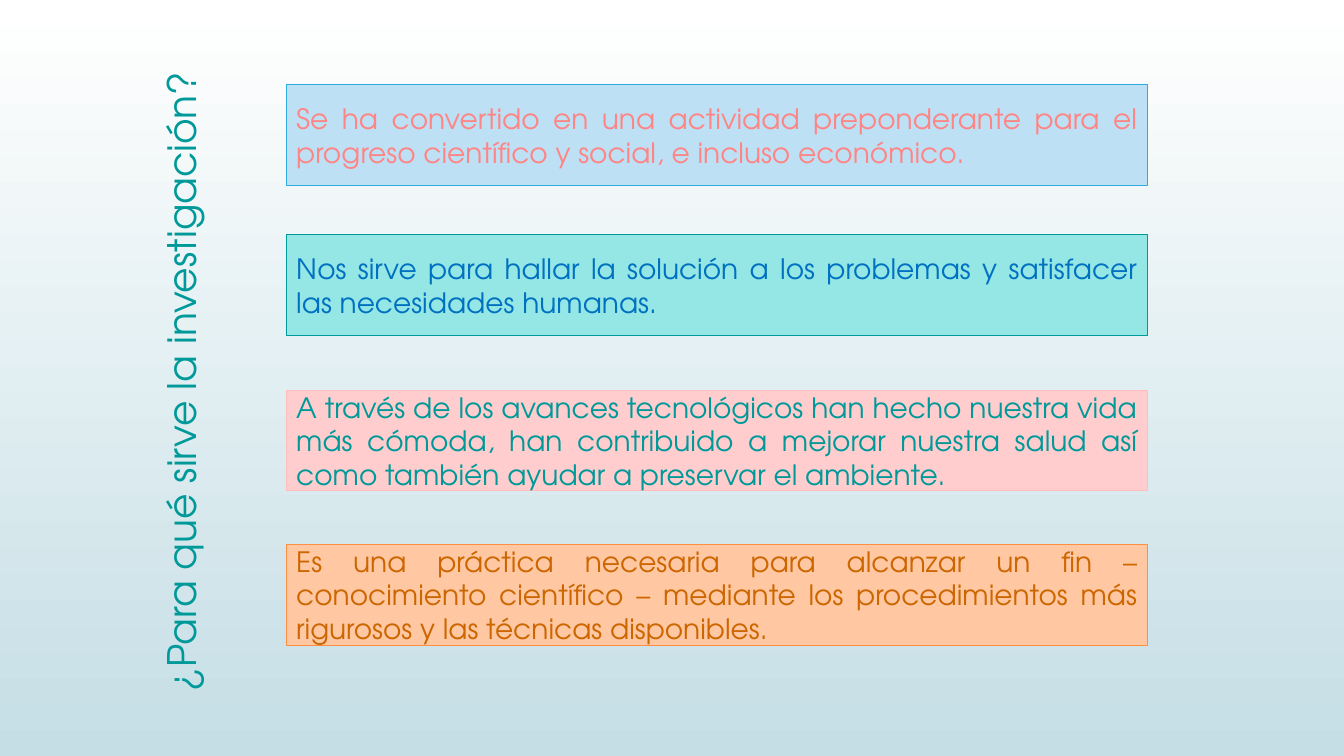
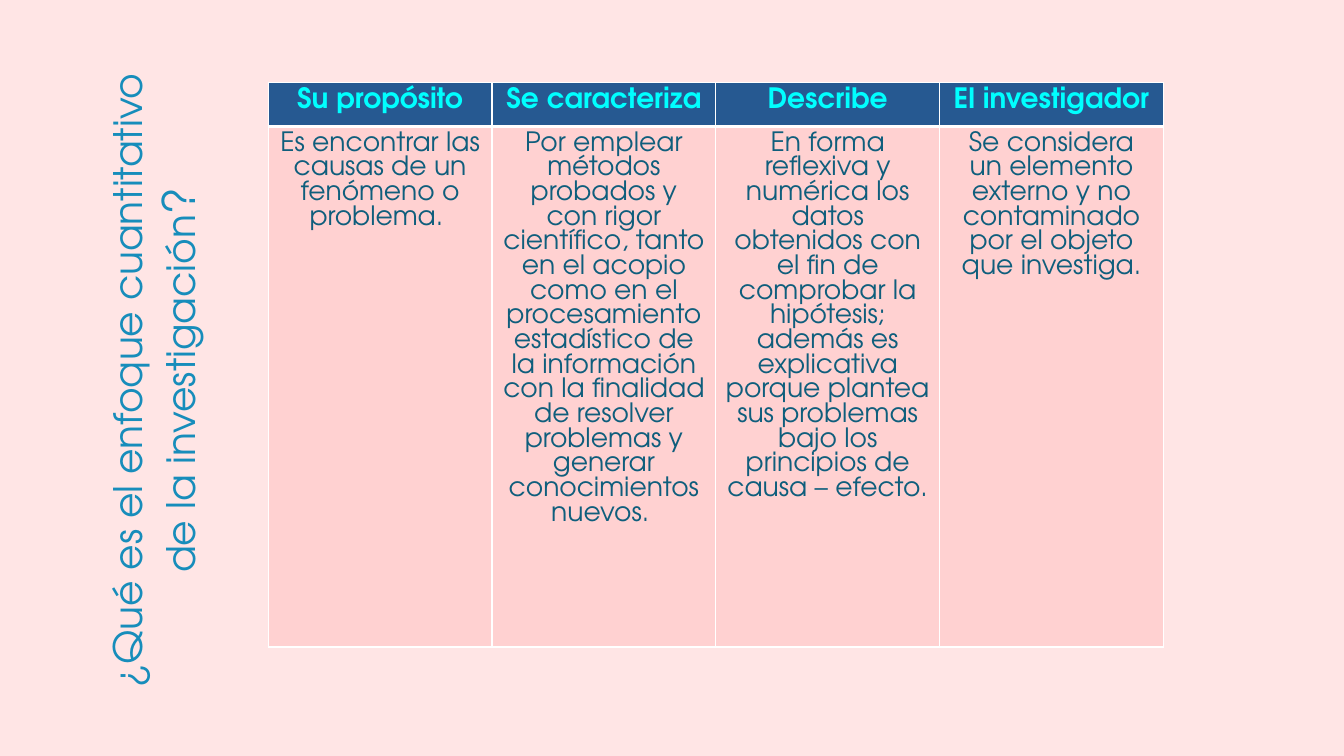
from dataclasses import dataclass

from lxml import etree
from pptx import Presentation
from pptx.dml.color import RGBColor
from pptx.enum.shapes import MSO_SHAPE as Preset
from pptx.enum.text import MSO_ANCHOR as Anchor, PP_ALIGN as Align
from pptx.oxml.ns import qn
from pptx.slide import Slide
from pptx.table import _Cell as Cell
from pptx.text.text import TextFrame
from pptx.util import Inches, Pt

FONT = "TeX Gyre Adventor"
WHITE = "FFFFFF"
TEAL = "009999"
BLUE = "178DBB"
HEADER_FILL = "265991"
HEADER_TEXT = "00FFFF"
BODY_FILL = "FFD1D1"
BODY_TEXT = "0F5E7C"
THIN, THICK = 1, 3


@dataclass(frozen=True)
class TextStyle:
    size: float
    color: str
    bold: bool = False


@dataclass(frozen=True)
class Statement:
    top: float
    fill: str
    line: str
    color: str
    text: str


@dataclass(frozen=True)
class Column:
    heading: str
    body: str


STATEMENTS = [
    Statement(0.84, "BDE0F5", "2FACDC", "FF8585",
              "Se ha convertido en una actividad preponderante para el progreso "
              "científico y social, e incluso económico."),
    Statement(2.33, "95E7E5", TEAL, "0070C0",
              "Nos sirve para hallar la solución a los problemas y satisfacer "
              "las necesidades humanas."),
    Statement(3.87, "FFCDCD", "FFBDBD", TEAL,
              "A través de los avances tecnológicos han hecho nuestra vida más "
              "cómoda, han contribuido a mejorar nuestra salud así como también "
              "ayudar a preservar el ambiente."),
    Statement(5.4, "FFC8A3", "FF8F43", "CC6600",
              "Es una práctica necesaria para alcanzar un fin – conocimiento "
              "científico – mediante los procedimientos más rigurosos y las "
              "técnicas disponibles."),
]

COLUMNS = [
    Column("Su propósito",
           "Es encontrar las causas de un fenómeno o problema. "),
    Column("Se caracteriza",
           "Por emplear métodos probados y con rigor científico, tanto en el "
           "acopio como en el procesamiento estadístico de la información con "
           "la finalidad de resolver problemas y generar conocimientos nuevos. "),
    Column("Describe",
           "En forma reflexiva y numérica los datos obtenidos con el fin de "
           "comprobar la hipótesis; además es explicativa porque plantea sus "
           "problemas bajo los principios de causa – efecto."),
    Column("El investigador",
           "Se considera un elemento externo y no contaminado por el objeto "
           "que investiga."),
]


def rgb(color: str) -> RGBColor:
    return RGBColor.from_string(color)


def write(text_frame: TextFrame, runs: list[tuple[str, TextStyle]],
          align: Align) -> None:
    """Fill the first paragraph run by run."""
    text_frame.word_wrap = True
    paragraph = text_frame.paragraphs[0]
    paragraph.alignment = align
    for text, style in runs:
        run = paragraph.add_run()
        run.text = text
        run.font.name = FONT
        run.font.size = Pt(style.size)
        run.font.bold = style.bold
        run.font.color.rgb = rgb(style.color)


def add_side_title(slide: Slide, left: float, top: float, width: float,
                   height: float, runs: list[tuple[str, TextStyle]]) -> None:
    """Add a title that reads upwards along the left side."""
    shape = slide.shapes.add_textbox(
        Inches(left), Inches(top), Inches(width), Inches(height))
    shape.rotation = 270
    shape.text_frame.vertical_anchor = Anchor.TOP
    write(shape.text_frame, runs, Align.CENTER)


def add_statement(slide: Slide, statement: Statement) -> None:
    shape = slide.shapes.add_shape(
        Preset.RECTANGLE, Inches(2.84), Inches(statement.top),
        Inches(8.54), Inches(1))
    shape.shadow.inherit = False
    shape.fill.solid()
    shape.fill.fore_color.rgb = rgb(statement.fill)
    shape.line.color.rgb = rgb(statement.line)
    shape.line.width = Pt(0.75)
    shape.text_frame.vertical_anchor = Anchor.MIDDLE
    style = TextStyle(20, statement.color)
    write(shape.text_frame, [(statement.text, style)], Align.JUSTIFY)


def set_borders(cell: Cell, top: float, bottom: float) -> None:
    properties = cell._tc.get_or_add_tcPr()
    widths = {"a:lnL": THIN, "a:lnR": THIN, "a:lnT": top, "a:lnB": bottom}
    for position, (tag, width) in enumerate(widths.items()):
        line = etree.Element(qn(tag), w=str(Pt(width)))
        fill = etree.SubElement(line, qn("a:solidFill"))
        etree.SubElement(fill, qn("a:srgbClr"), val=WHITE)
        properties.insert(position, line)


def fill_cell(cell: Cell, text: str, style: TextStyle, fill: str,
              top: float, bottom: float) -> None:
    cell.fill.solid()
    cell.fill.fore_color.rgb = rgb(fill)
    set_borders(cell, top, bottom)
    write(cell.text_frame, [(text, style)], Align.CENTER)


def add_approach_table(slide: Slide) -> None:
    header_height, body_height, column_width = 0.41, 4.26, 2.22
    table = slide.shapes.add_table(
        2, len(COLUMNS), Inches(2.66), Inches(0.82),
        Inches(column_width * len(COLUMNS)),
        Inches(header_height + body_height)).table
    table.rows[0].height = Inches(header_height)
    table.rows[1].height = Inches(body_height)
    heading_style = TextStyle(20, HEADER_TEXT, bold=True)
    body_style = TextStyle(19, BODY_TEXT)
    for index, column in enumerate(COLUMNS):
        table.columns[index].width = Inches(column_width)
        fill_cell(table.cell(0, index), column.heading, heading_style,
                  HEADER_FILL, THIN, THICK)
        fill_cell(table.cell(1, index), column.body, body_style,
                  BODY_FILL, THICK, THIN)


def build_purpose_slide(slide: Slide) -> None:
    background = slide.background.fill
    background.gradient()
    background.gradient_angle = 270
    for stop, color in zip(background.gradient_stops, (WHITE, "C5DEE5")):
        stop.color.rgb = rgb(color)
    add_side_title(slide, -1.41, 3.4, 6.62, 0.77, [
        ("¿Para qué sirve la investigación?", TextStyle(28, TEAL))])
    for statement in STATEMENTS:
        add_statement(slide, statement)


def build_approach_slide(slide: Slide) -> None:
    slide.background.fill.solid()
    slide.background.fill.fore_color.rgb = rgb("FFE5E5")
    add_side_title(slide, -1.66, 3.18, 6.46, 1.19, [
        ("¿Qué es el enfoque cuantitativo de la investigación",
         TextStyle(28, BLUE)),
        ("?", TextStyle(32, BLUE))])
    add_approach_table(slide)


def main() -> None:
    presentation = Presentation()
    presentation.slide_width = Inches(13.33)
    presentation.slide_height = Inches(7.5)
    blank_layout = presentation.slide_layouts[6]
    for build in (build_purpose_slide, build_approach_slide):
        build(presentation.slides.add_slide(blank_layout))
    presentation.save("out.pptx")


if __name__ == "__main__":
    main()
